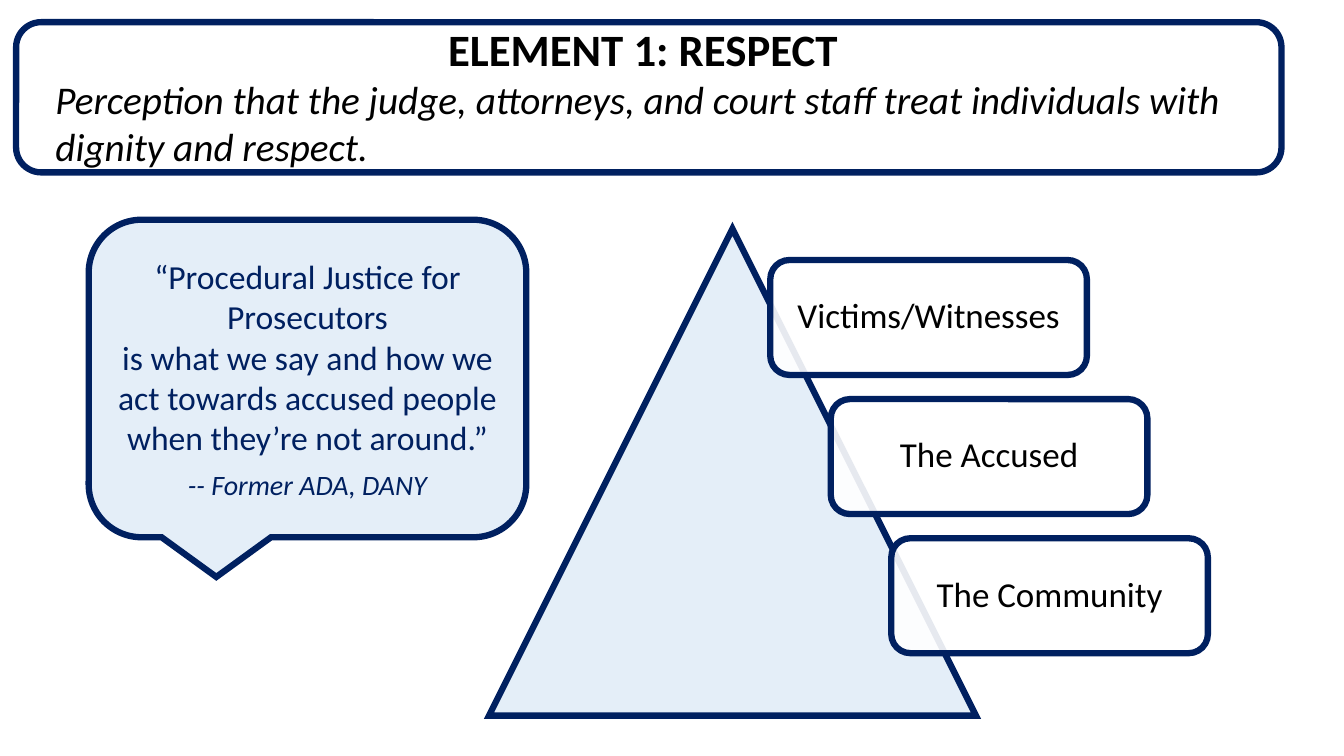
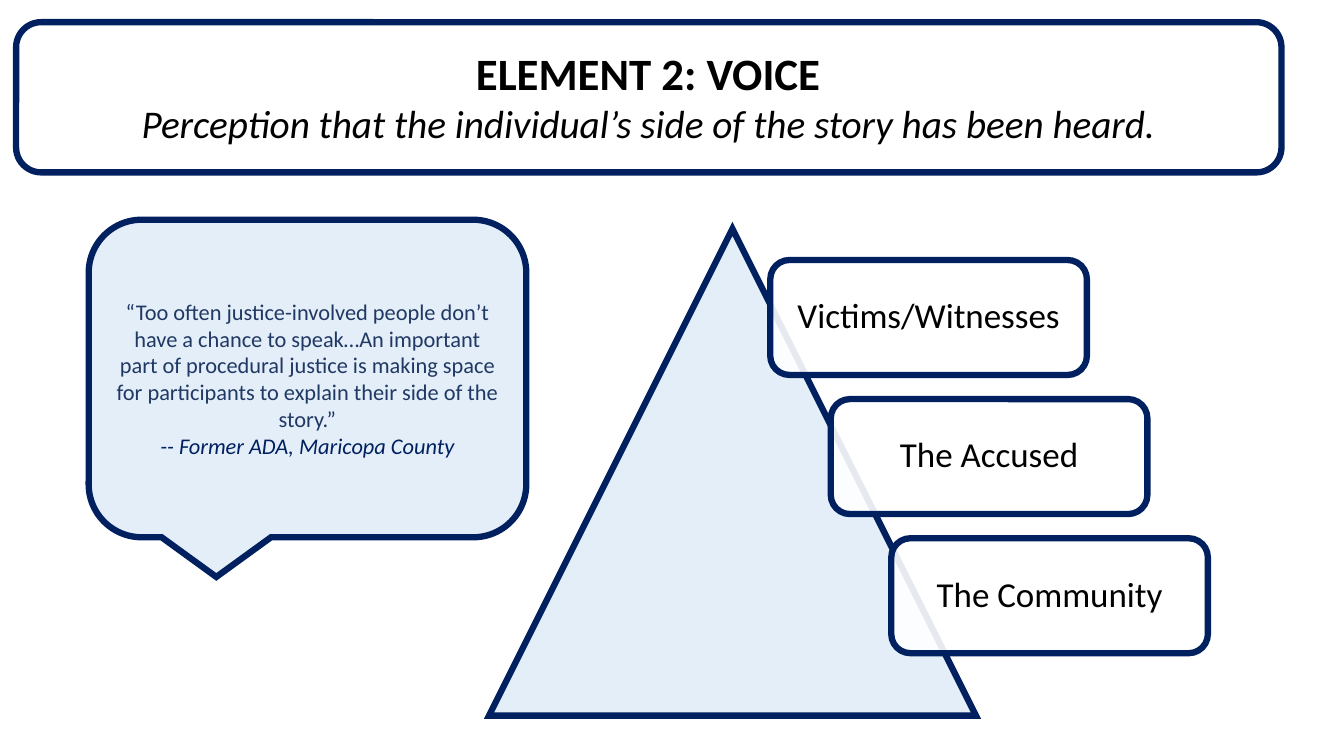
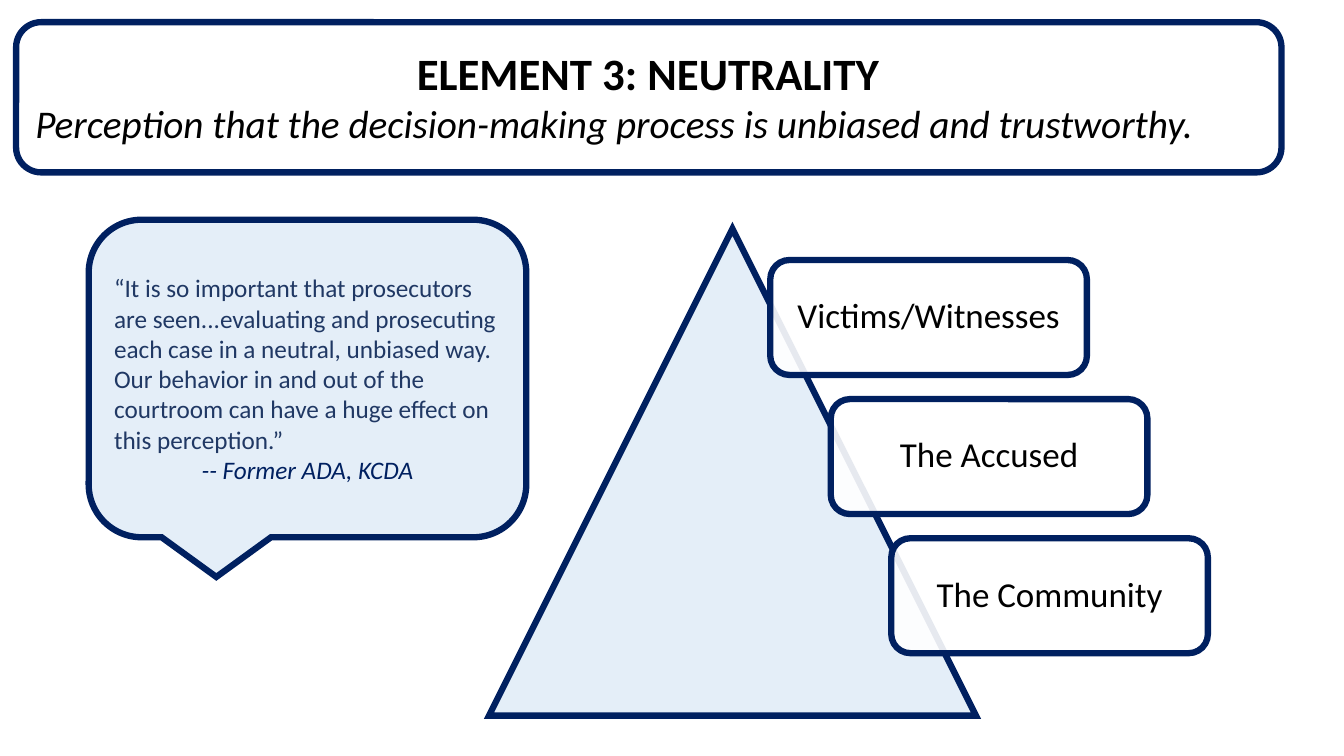
from dataclasses import dataclass

from lxml.etree import SubElement
from pptx import Presentation
from pptx.dml.color import RGBColor
from pptx.enum.shapes import MSO_SHAPE
from pptx.enum.text import MSO_ANCHOR, MSO_AUTO_SIZE, PP_ALIGN
from pptx.oxml.ns import qn
from pptx.util import Inches, Pt


@dataclass(frozen=True)
class Theme:
    """Colours, font and type sizes of the deck."""
    navy: str = "002060"
    slate: str = "203864"
    pale: str = "E4EEF8"
    white: str = "FFFFFF"
    black: str = "000000"
    font: str = "Calibri"
    outline: float = 4.5
    heading: int = 32
    definition: int = 28
    label: int = 25


T = Theme()
BANNER = (0.16, 0.22, 12.55, 1.49)
CALLOUT = (0.88, 2.18, 4.34, 3.15)
PYRAMID = (4.85, 2.27, 4.83, 4.83)
AUDIENCES = ("Victims/Witnesses", "The Accused", "The Community")

ELEMENTS = (
    {
        "heading": "ELEMENT 1: RESPECT",
        "definition": "Perception that the judge, attorneys, and court staff "
                      "treat individuals with dignity and respect.",
        "definition_align": PP_ALIGN.LEFT,
        "title_span": (0.29, 11.86),
        "quote": ("“Procedural Justice for Prosecutors",
                  "is what we say and how we act towards accused people "
                  "when they’re not around.”"),
        "quote_format": {"size": 24, "color": T.navy},
        "quote_align": PP_ALIGN.CENTER,
        "credit": "-- Former ADA, DANY",
        "credit_size": 20,
        "credit_gap": 7.3,
    },
    {
        "heading": "ELEMENT 2: VOICE",
        "definition": "Perception that the individual’s side of the story "
                      "has been heard.",
        "definition_align": PP_ALIGN.CENTER,
        "title_span": (0.27, 12),
        "quote": ("“Too often justice-involved people don’t have a chance to "
                  "speak…An important part of procedural justice is making "
                  "space for participants to explain their side of the "
                  "story.”",),
        "quote_format": {"size": 16, "color": T.slate},
        "quote_align": PP_ALIGN.CENTER,
        "credit": "-- Former ADA, Maricopa County",
        "credit_size": 16,
        "credit_gap": 0,
    },
    {
        "heading": "ELEMENT 3: NEUTRALITY",
        "definition": "Perception that the decision-making process is "
                      "unbiased and trustworthy.",
        "definition_align": PP_ALIGN.LEFT,
        "title_span": (0.09, 12.36),
        "quote": ("“It is so important that prosecutors are seen..."
                  "evaluating and prosecuting each case in a neutral, "
                  "unbiased way. Our behavior in and out of the courtroom "
                  "can have a huge effect on this perception.”",),
        "quote_format": {"size": 18, "color": T.slate},
        "quote_align": PP_ALIGN.LEFT,
        "credit": "-- Former ADA, KCDA",
        "credit_size": 18,
        "credit_gap": 0,
    },
)


def add_outlined(shapes, kind, box, fill=None, opacity=None):
    """Add a preset shape with the navy outline and an optional fill."""
    sp = shapes.add_shape(kind, *map(Inches, box))
    sp.shadow.inherit = False
    if fill:
        sp.fill.solid()
        sp.fill.fore_color.rgb = RGBColor.from_string(fill)
    else:
        sp.fill.background()
    if opacity:
        color = sp.element.spPr.find(qn("a:solidFill"))[0]
        SubElement(color, qn("a:alpha"), val=str(opacity * 1000))
    sp.line.color.rgb = RGBColor.from_string(T.navy)
    sp.line.width = Pt(T.outline)
    SubElement(sp.element.spPr.find(qn("a:ln")), qn("a:miter"), lim="800000")
    return sp


def write(sp, paragraphs):
    """Fill a shape with (text, font format, paragraph format) entries."""
    tf = sp.text_frame
    for name, value in {"word_wrap": True, "auto_size": MSO_AUTO_SIZE.NONE,
                        "vertical_anchor": MSO_ANCHOR.MIDDLE}.items():
        setattr(tf, name, value)
    for i, (text, font, layout) in enumerate(paragraphs):
        p = tf.add_paragraph() if i else tf.paragraphs[0]
        for name, value in layout.items():
            setattr(p, name, value)
        r = p.add_run()
        r.text = text
        r.font.color.rgb = RGBColor.from_string(font["color"])
        style = {"name": T.font, "size": Pt(font["size"]),
                 "bold": font.get("bold", False),
                 "italic": font.get("italic", False)}
        for name, value in style.items():
            setattr(r.font, name, value)


def add_banner(s, box, element):
    """Frame the title placeholder, which holds heading and definition."""
    left, top, _, height = box
    inset, width = element["title_span"]
    add_outlined(s.shapes, MSO_SHAPE.ROUNDED_RECTANGLE, box)
    title = s.shapes.title
    place = {"left": left + inset, "top": top - 0.06,
             "width": width, "height": height + 0.09}
    for name, value in place.items():
        setattr(title, name, Inches(value))
    write(title, (
        (element["heading"],
         {"size": T.heading, "color": T.black, "bold": True},
         {"alignment": PP_ALIGN.CENTER}),
        (element["definition"],
         {"size": T.definition, "color": T.black, "italic": True},
         {"alignment": element["definition_align"]}),
    ))


def add_quote(s, box, element):
    """Add the speech callout with the quote and its credit."""
    sp = add_outlined(s.shapes, MSO_SHAPE.ROUNDED_RECTANGULAR_CALLOUT, box, T.pale)
    lines = [(text, element["quote_format"],
              {"alignment": element["quote_align"]})
             for text in element["quote"]]
    credit = (element["credit"],
              {"size": element["credit_size"], "color": T.navy, "italic": True},
              {"alignment": PP_ALIGN.CENTER,
               "space_before": Pt(element["credit_gap"])})
    write(sp, lines + [credit])


def add_pyramid(s, box, labels):
    """Add the triangle with label boxes stepping down its right side."""
    left, top, _, _ = box
    group = s.shapes.add_group_shape()
    add_outlined(group.shapes, MSO_SHAPE.ISOSCELES_TRIANGLE, box, T.pale)
    for i, label in enumerate(labels):
        label_box = (left + 2.79 + 0.6 * i, top + 0.31 + 1.38 * i, 3.14, 1.14)
        sp = add_outlined(group.shapes, MSO_SHAPE.ROUNDED_RECTANGLE,
                          label_box, T.white, 90)
        write(sp, ((label, {"size": T.label, "color": T.black},
                    {"alignment": PP_ALIGN.CENTER, "line_spacing": 0.9}),))


def add_element_slide(prs, element):
    """Add one slide for an element of procedural justice."""
    s = prs.slides.add_slide(prs.slide_layouts.get_by_name("Title Only"))
    add_banner(s, BANNER, element)
    add_pyramid(s, PYRAMID, AUDIENCES)
    add_quote(s, CALLOUT, element)


def main():
    """Build and save the deck."""
    prs = Presentation()
    prs.slide_width, prs.slide_height = Inches(13.33), Inches(7.5)
    for element in ELEMENTS:
        add_element_slide(prs, element)
    prs.save("out.pptx")


if __name__ == "__main__":
    main()
